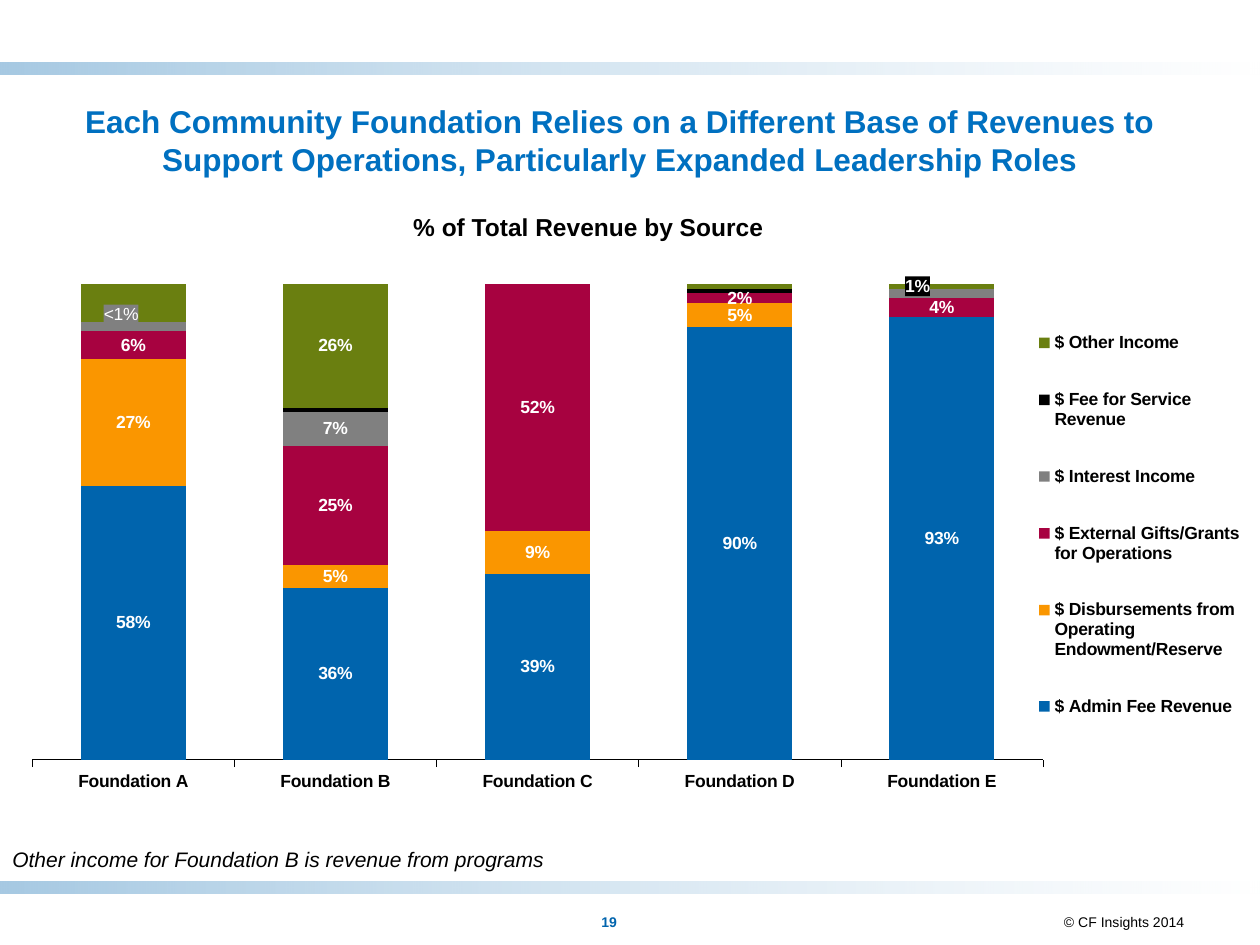
from pptx import Presentation
from pptx import util as u
from pptx.chart import data as chart_data
from pptx.dml import color
from pptx.enum import chart as chart_enum, shapes, text
from pptx.oxml import ns, parse_xml

COLORS = {
    "blue": "0064AD", "title": "0070C0", "orange": "FA9600", "red": "A70240",
    "gray": "808080", "black": "000000", "green": "6A7F10", "white": "FFFFFF",
}
RGB = {name: color.RGBColor.from_string(value) for name, value in COLORS.items()}
NAMESPACES = ns.nsdecls("c", "a")


def manual_layout(x, y, width=None, height=None, inner=False):
    """Return a c:layout element; without a size it is an offset."""
    values = {"x": x, "y": y}
    modes = ""
    if width:
        values.update(w=width, h=height)
        modes = '<c:xMode val="edge"/><c:yMode val="edge"/>'
    target = '<c:layoutTarget val="inner"/>' if inner else ""
    numbers = "".join(f'<c:{key} val="{value}"/>' for key, value in values.items())
    return parse_xml(f"<c:layout {NAMESPACES}><c:manualLayout>{target}{modes}{numbers}"
                     "</c:manualLayout></c:layout>")


presentation = Presentation()
presentation.slide_width = u.Inches(10)
presentation.slide_height = u.Inches(7.5)
slide = presentation.slides.add_slide(presentation.slide_layouts[6])

# Fading bands
for top in (0.5, 7):
    band = slide.shapes.add_shape(shapes.MSO_SHAPE.RECTANGLE, 0, u.Inches(top),
                                  u.Inches(10), u.Inches(0.09))
    band.shadow.inherit = False
    band.line.fill.background()
    band.fill.gradient()
    band.fill.gradient_angle = 0
    for stop, name in zip(band.fill.gradient_stops, ("blue", "white")):
        stop.color.rgb = RGB[name]
    stop_colors = band.fill._xPr.iter(ns.qn("a:srgbClr"))
    for stop_color, alpha in zip(stop_colors, (35000, 25000)):
        stop_color.append(parse_xml(f'<a:alpha {NAMESPACES} val="{alpha}"/>'))

# Revenue chart
categories = [f"Foundation {letter}" for letter in "ABCDE"]
# name, values, colour, indexes of points without a label
revenue = [
    ("$ Admin Fee Revenue", (0.58, 0.36, 0.39, 0.9, 0.93), "blue", ()),
    ("$ Disbursements from Operating Endowment/Reserve",
     (0.27, 0.05, 0.09, 0.05, 0), "orange", (4,)),
    ("$ External Gifts/Grants for Operations",
     (0.06, 0.25, 0.52, 0.02, 0.04), "red", ()),
    ("$ Interest Income", (0.02, 0.07, 0, 0, 0.02), "gray", (2, 3, 4)),
    ("$ Fee for Service Revenue", (0, 0.01, 0, 0.01, 0), "black", range(5)),
    ("$ Other Income", (0.08, 0.26, 0, 0.01, 0.01), "green", (0, 2, 3)),
]
# (series, point): text, fill, bold, offset
moved_labels = {
    ("$ Interest Income", 0): ("<1%", "gray", False, (-0.01, -0.02)),
    ("$ Other Income", 4): ("1%", "black", True, (-0.02, 0)),
}
table = chart_data.CategoryChartData(number_format="0%")
table.categories = categories
for name, values, *_ in revenue:
    table.add_series(name, values)
chart = slide.shapes.add_chart(
    chart_enum.XL_CHART_TYPE.COLUMN_STACKED_100, u.Inches(0.25), u.Inches(1.64),
    u.Inches(9.67), u.Inches(4.72), table).chart
chart.has_title = False
chart.has_legend = True
chart.legend.position = chart_enum.XL_LEGEND_POSITION.RIGHT
chart.legend.include_in_layout = False
plot = chart.plots[0]
plot.gap_width, plot.overlap, plot.vary_by_categories = 93, 100, False

category_axis, value_axis = chart.category_axis, chart.value_axis
category_axis.major_tick_mark = chart_enum.XL_TICK_MARK.OUTSIDE
category_axis.format.line.color.rgb = RGB["black"]
category_axis.format.line.width = u.Pt(0.19)
value_axis.visible = False
value_axis.minimum_scale, value_axis.maximum_scale, value_axis.major_unit = 0, 1, 0.2
value_axis.major_gridlines.format.line.color.rgb = RGB["white"]
value_axis.major_gridlines.format.line.width = u.Pt(0.75)

for series, (name, _, fill, unlabelled) in zip(plot.series, revenue):
    series.format.fill.solid()
    series.format.fill.fore_color.rgb = RGB[fill]
    series.invert_if_negative = False
    labels = series.data_labels
    labels.show_value = True
    labels.number_format, labels.number_format_is_linked = "0%", False
    labels.position = chart_enum.XL_LABEL_POSITION.CENTER
    for position, index in enumerate(unlabelled):
        labels._element.insert(position, parse_xml(
            f'<c:dLbl {NAMESPACES}><c:idx val="{index}"/><c:delete val="1"/></c:dLbl>'))
    for (series_name, index), (words, back, bold, offset) in moved_labels.items():
        if series_name != name:
            continue
        label = series.points[index].data_label
        label.position = chart_enum.XL_LABEL_POSITION.CENTER
        label.text_frame.text = words
        font = label.text_frame.paragraphs[0].runs[0].font
        font.name, font.size, font.bold = "Arial", u.Pt(10), bold
        font.color.rgb = RGB["white"]
        element = next(item for item in labels._element.findall(ns.qn("c:dLbl"))
                       if item.find(ns.qn("c:idx")).get("val") == str(index))
        for old in element.findall(ns.qn("c:layout")) + element.findall(ns.qn("c:spPr")):
            element.remove(old)
        element.find(ns.qn("c:idx")).addnext(manual_layout(*offset))
        element.find(ns.qn("c:tx")).addnext(parse_xml(
            f'<c:spPr {NAMESPACES}><a:solidFill><a:srgbClr val="{COLORS[back]}"/>'
            "</a:solidFill></c:spPr>"))

chart_fonts = [(chart.font, "white"), (category_axis.tick_labels.font, "black"),
               (chart.legend.font, "black")]
chart_fonts += [(series.data_labels.font, "white") for series in plot.series]
for font, name in chart_fonts:
    font.name, font.size, font.bold = "Arial", u.Pt(10), True
    font.color.rgb = RGB[name]

plot_area = chart._chartSpace.chart.plotArea
for old in plot_area.findall(ns.qn("c:layout")):
    plot_area.remove(old)
plot_area.insert(0, manual_layout(0, 0.13, 0.83, 0.8, inner=True))
legend = chart.legend._element
for old in legend.findall(ns.qn("c:layout")):
    legend.remove(old)
legend.find(ns.qn("c:legendPos")).addnext(manual_layout(0.82, 0.15, 0.18, 0.77))

# Title, chart heading, note and footer
align = text.PP_ALIGN
texts = [
    ("Each Community Foundation Relies on a Different Base of Revenues to Support "
     "Operations, Particularly Expanded Leadership Roles",
     (0.34, 0.76, 9.16, 0.71), align.CENTER, "title", {"size": u.Pt(18), "bold": True}),
    ("% of Total Revenue by Source",
     (0.92, 1.63, 7.5, 0.34), align.CENTER, "black", {"size": u.Pt(14), "bold": True}),
    ("Other income for Foundation B is revenue from programs",
     (0, 6.67, 4.67, 0.5), align.LEFT, "black", {"size": u.Pt(12), "italic": True}),
    ("19", (3.67, 7.2, 2.33, 0.3), align.CENTER, "blue", {"size": u.Pt(8), "bold": True}),
    ("© CF Insights 2014", (6.33, 7.2, 3.17, 0.3), align.RIGHT, "black", {"size": u.Pt(8)}),
]
for words, box, alignment, name, formats in texts:
    frame = slide.shapes.add_textbox(*map(u.Inches, box)).text_frame
    frame.word_wrap = True
    paragraph = frame.paragraphs[0]
    paragraph.alignment = alignment
    run = paragraph.add_run()
    run.text = words
    run.font.name = "Arial"
    run.font.color.rgb = RGB[name]
    for key, value in formats.items():
        setattr(run.font, key, value)

presentation.save("out.pptx")
